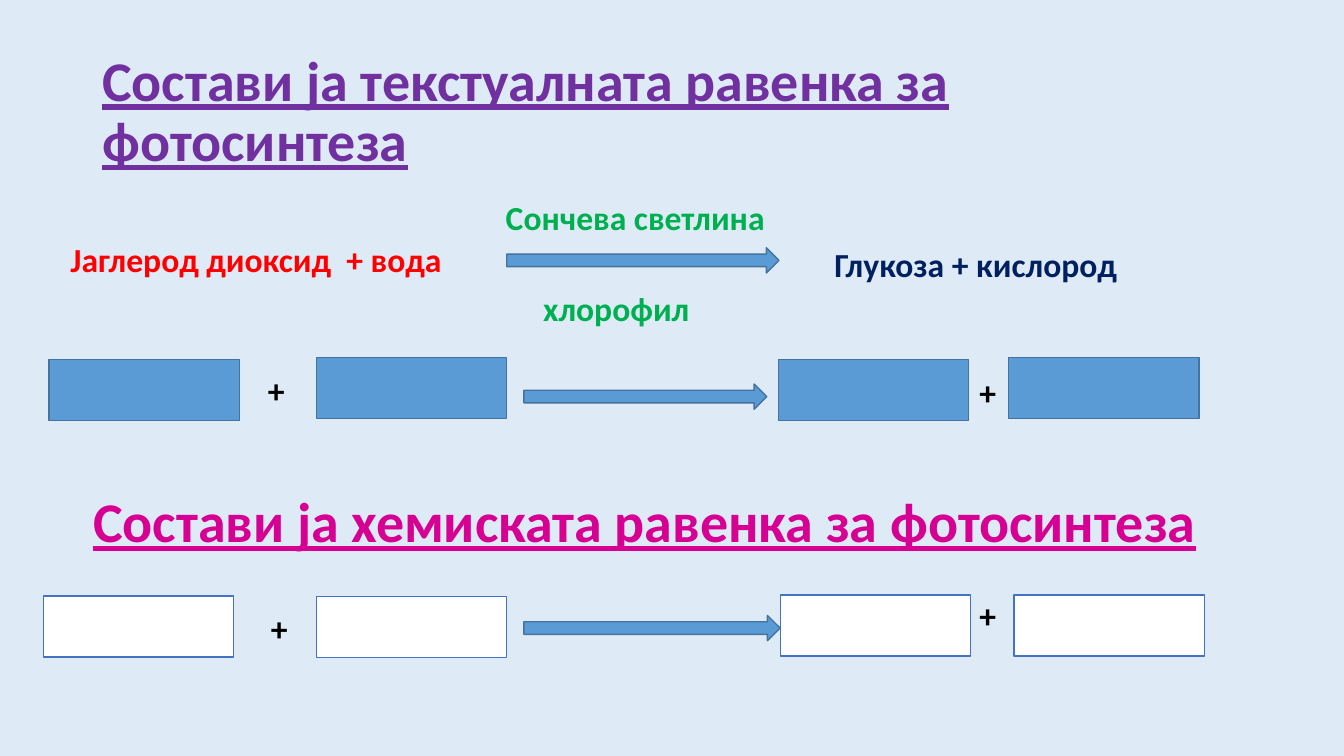
import pptx
import pptx.dml.color
import pptx.enum.shapes
import pptx.enum.text
import pptx.util

Pt = pptx.util.Pt
RGBColor = pptx.dml.color.RGBColor
SHAPE = pptx.enum.shapes.MSO_SHAPE
ANCHOR = pptx.enum.text.MSO_ANCHOR
AUTO_SIZE = pptx.enum.text.MSO_AUTO_SIZE

PALE_BLUE = RGBColor(0xDE, 0xEB, 0xF7)
BLUE = RGBColor(0x5B, 0x9B, 0xD5)
DARK_BLUE = RGBColor(0x43, 0x73, 0x9E)
OUTLINE_BLUE = RGBColor(0x44, 0x72, 0xC4)
WHITE = RGBColor(0xFF, 0xFF, 0xFF)
BLACK = RGBColor(0, 0, 0)
PURPLE = RGBColor(0x70, 0x30, 0xA0)
MAGENTA = RGBColor(0xD6, 0x00, 0x93)
RED = RGBColor(0xFF, 0, 0)
NAVY = RGBColor(0x00, 0x20, 0x60)
GREEN = RGBColor(0x00, 0xB0, 0x50)

# Content: text, left, top, (width,) colour
headings = [
    ("Состави ја текстуалната равенка за фотосинтеза", 66, 28.8, PURPLE),
    ("Состави ја хемиската равенка за фотосинтеза", 59.5, 322.6, MAGENTA),
]
word_equation = [
    ("Јаглерод диоксид  + вода", 43.2, 167, 286.6, RED),
    ("Глукоза + кислород", 589, 170.6, 223.2, NAVY),
    ("Сончева светлина", 354.2, 136.8, 201.6, GREEN),
    ("хлорофил", 380.9, 202.3, 120.2, GREEN),
]
# Each answer row: fill, outline, box corners, plus corners
answer_rows = [
    (BLUE, DARK_BLUE,
     [(35, 257), (226, 255.5), (556, 257), (720.5, 255.5)],
     [(184.3, 260.6), (692.6, 262)]),
    (WHITE, OUTLINE_BLUE,
     [(31, 425.7), (226, 426.2), (557.5, 425), (724.3, 425)],
     [(186.5, 430.6), (692.6, 421.2)]),
]
# Arrows: left, top, width
arrows = [(362, 177, 194.4), (374.2, 274.3, 173.5), (374.2, 439.6, 183)]

HEADING_W, HEADING_H = 828, 104.4
LABEL_H, PLUS_W = 36, 26.6
BOX_W, BOX_H = 136, 43.5
ARROW_H = 18

# Slide
deck = pptx.Presentation()
deck.slide_width, deck.slide_height = Pt(960), Pt(540)
slide = deck.slides.add_slide(deck.slide_layouts[6])
slide.background.fill.solid()
slide.background.fill.fore_color.rgb = PALE_BLUE


def add_text(words, left, top, width, height, frame_format, font_format,
             colour, spacing=None):
    box = slide.shapes.add_textbox(Pt(left), Pt(top), Pt(width), Pt(height))
    frame = box.text_frame
    for name, value in frame_format.items():
        setattr(frame, name, value)
    paragraph = frame.paragraphs[0]
    paragraph.line_spacing = spacing
    run = paragraph.add_run()
    run.text = words
    for name, value in font_format.items():
        setattr(run.font, name, value)
    run.font.color.rgb = colour


def add_figure(preset, left, top, width, height, fill, outline):
    figure = slide.shapes.add_shape(
        preset, Pt(left), Pt(top), Pt(width), Pt(height))
    figure.shadow.inherit = False
    figure.fill.solid()
    figure.fill.fore_color.rgb = fill
    figure.line.color.rgb = outline
    figure.line.width = Pt(1)


HEADING_FRAME = {"word_wrap": True, "vertical_anchor": ANCHOR.MIDDLE}
LABEL_FRAME = {"word_wrap": False, "auto_size": AUTO_SIZE.SHAPE_TO_FIT_TEXT}
LABEL_FONT = {"name": "Calibri", "size": Pt(24), "bold": True}
HEADING_FONT = {**LABEL_FONT, "size": Pt(40), "underline": True}

# Headings
for words, left, top, colour in headings:
    add_text(words, left, top, HEADING_W, HEADING_H,
             HEADING_FRAME, HEADING_FONT, colour, 0.9)

# Word equation
for words, left, top, width, colour in word_equation:
    add_text(words, left, top, width, LABEL_H,
             LABEL_FRAME, LABEL_FONT, colour)

# Empty answer boxes and the plus signs between them
for fill, outline, boxes, pluses in answer_rows:
    for left, top in boxes:
        add_figure(SHAPE.RECTANGLE, left, top, BOX_W, BOX_H, fill, outline)
    for left, top in pluses:
        add_text("+", left, top, PLUS_W, LABEL_H,
                 LABEL_FRAME, LABEL_FONT, BLACK)

# Reaction arrows
for left, top, width in arrows:
    add_figure(SHAPE.RIGHT_ARROW, left, top, width, ARROW_H, BLUE, DARK_BLUE)

deck.save("out.pptx")
